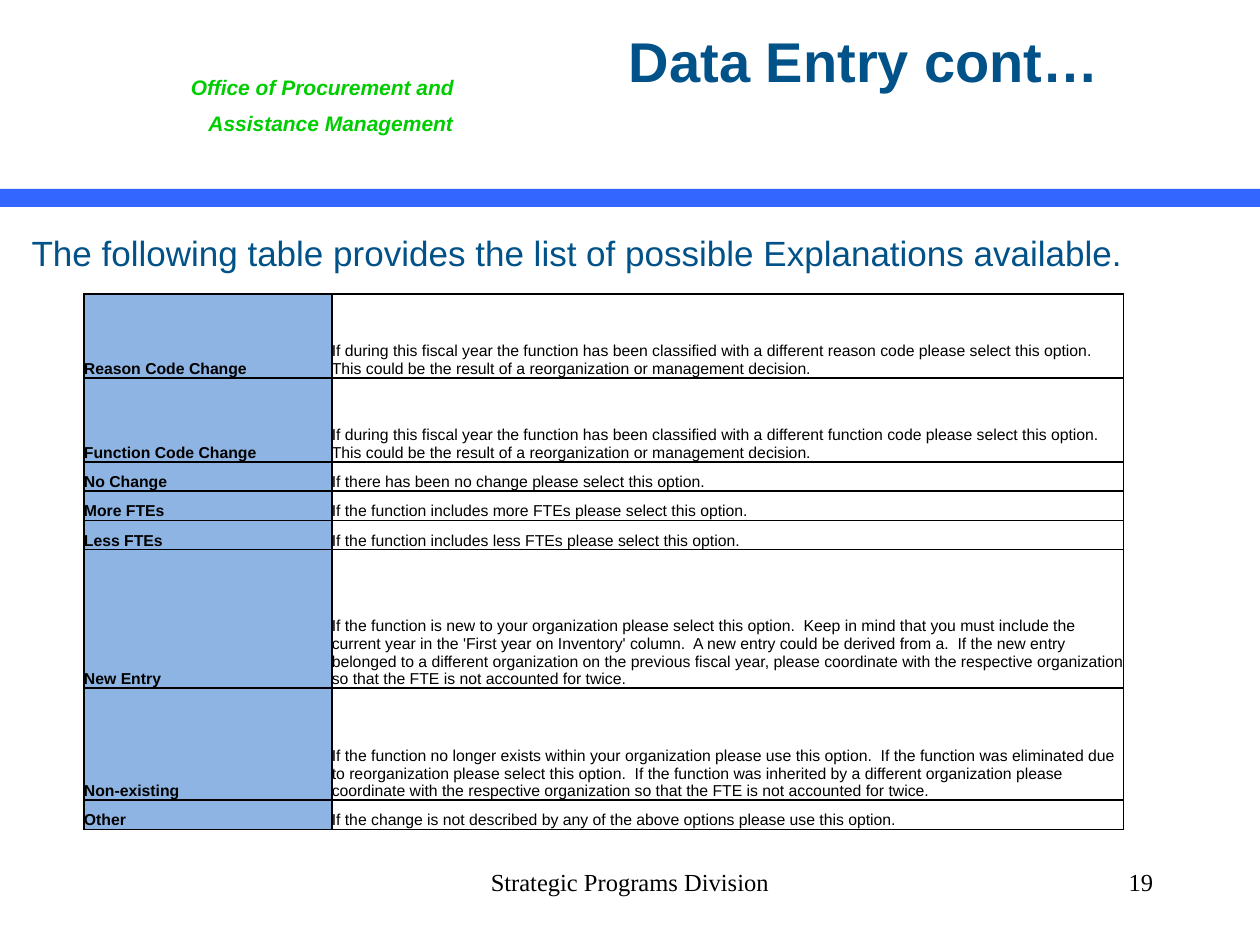
import pptx
import pptx.util
import pptx.dml.color
import pptx.enum.shapes
import pptx.enum.text
import pptx.oxml

COLS, ROWS = 120, 90
UNIT = pptx.util.Inches(10) / COLS
NS = "http://schemas.openxmlformats.org/drawingml/2006/main"
ALIGN = pptx.enum.text.PP_ALIGN
ANCHOR = pptx.enum.text.MSO_ANCHOR

TITLE = {"name": "Arial", "size": pptx.util.Pt(32), "bold": True}
BODY = {"name": "Arial", "size": pptx.util.Pt(20)}
OFFICE = {"name": "Arial", "size": pptx.util.Pt(12), "bold": True, "italic": True}
FOOTER = {"name": "Times New Roman", "size": pptx.util.Pt(14)}
LABEL = {"name": "Arial", "size": pptx.util.Pt(9), "bold": True}
DETAIL = {**LABEL, "bold": False}
NO_MARGINS = dict.fromkeys(
    ("margin_left", "margin_top", "margin_right", "margin_bottom"), 0)

EXPLANATIONS = [
    (8, "Reason Code Change",
     "If during this fiscal year the function has been classified with a different reason code "
     "please select this option.  This could be the result of a reorganization or management decision."),
    (8, "Function Code Change",
     "If during this fiscal year the function has been classified with a different function code "
     "please select this option.  This could be the result of a reorganization or management decision."),
    (2.78, "No Change", "If there has been no change please select this option."),
    (2.78, "More FTEs", "If the function includes more FTEs please select this option."),
    (2.78, "Less FTEs", "If the function includes less FTEs please select this option."),
    (13.2, "New Entry",
     "If the function is new to your organization please select this option.  Keep in mind that you "
     "must include the current year in the 'First year on Inventory' column.  A new entry could be "
     "derived from a.  If the new entry belonged to a different organization on the previous fiscal "
     "year, please coordinate with the respective organization so that the FTE is not accounted for twice."),
    (10.68, "Non-existing",
     "If the function no longer exists within your organization please use this option.  If the "
     "function was eliminated due to reorganization please select this option.  If the function was "
     "inherited by a different organization please coordinate with the respective organization so "
     "that the FTE is not accounted for twice."),
    (2.78, "Other",
     "If the change is not described by any of the above options please use this option."),
]


def grid(*values):
    return [round(v * UNIT) for v in values]


def rgb(value):
    return pptx.dml.color.RGBColor.from_string(value)


def assign(obj, values):
    for key, value in values.items():
        setattr(obj, key, value)


def write(p, text, fmt, color):
    r = p.add_run()
    r.text = text
    assign(r.font, fmt)
    r.font.color.rgb = rgb(color)


def add_text(s, box, lines, fmt, color, align=ALIGN.LEFT, margins=None):
    tf = s.shapes.add_textbox(*grid(*box)).text_frame
    tf.word_wrap = True
    assign(tf, margins or {})
    for i, text in enumerate(lines):
        p = tf.add_paragraph() if i else tf.paragraphs[0]
        p.alignment = align
        if i:
            p.space_before = pptx.util.Pt(6)
        write(p, text, fmt, color)
    return tf


def add_header(s, x, y, w, h):
    band = s.shapes.add_shape(
        pptx.enum.shapes.MSO_SHAPE.RECTANGLE, *grid(x, y + h - 1.7, w, 1.7))
    band.shadow.inherit = False
    band.fill.solid()
    band.fill.fore_color.rgb = rgb("3366FF")
    band.line.fill.background()
    tf = add_text(s, (x + 17, y + 6.5, 28.5, 6),
                  ["Office of Procurement and", "Assistance Management"], OFFICE, "00CD00")
    tf.paragraphs[1]._p.get_or_add_pPr().set("marL", str(pptx.util.Pt(10)))
    add_text(s, (x + 46.3, y + 2.5, 72, 14), ["Data Entry cont…"], TITLE, "005288",
             ALIGN.CENTER, NO_MARGINS)


def add_borders(cell):
    tcPr = cell._tc.get_or_add_tcPr()
    for i, side in enumerate(("lnL", "lnR", "lnT", "lnB")):
        tcPr.insert(i, pptx.oxml.parse_xml(
            f'<a:{side} xmlns:a="{NS}" w="12700"><a:solidFill>'
            f'<a:srgbClr val="000000"/></a:solidFill></a:{side}>'))


def add_explanations(s, x, y, w, h):
    table = s.shapes.add_table(len(EXPLANATIONS), 2, *grid(x, y, w, h)).table
    label_width = 23.6
    for column, width in zip(table.columns, grid(label_width, w - label_width)):
        column.width = width
    for i, (height, *texts) in enumerate(EXPLANATIONS):
        table.rows[i].height = grid(height)[0]
        for j, (text, fmt, fill) in enumerate(
                zip(texts, (LABEL, DETAIL), ("8DB4E3", "FFFFFF"))):
            cell = table.cell(i, j)
            assign(cell, {**NO_MARGINS, "vertical_anchor": ANCHOR.BOTTOM})
            cell.fill.solid()
            cell.fill.fore_color.rgb = rgb(fill)
            add_borders(cell)
            write(cell.text_frame.paragraphs[0], text, fmt, "000000")


def add_body(s, x, y, w, h):
    add_text(s, (x, y, w, h),
             ["The following table provides the list of possible Explanations available."],
             BODY, "005288", margins=NO_MARGINS)
    add_explanations(s, x + 5, y + 6, 99, 51)


def add_footer(s, x, y, w, h):
    add_text(s, (x + 41, y, 38, h), ["Strategic Programs Division"], FOOTER, "000000",
             ALIGN.CENTER)
    add_text(s, (x + w - 34, y, 25, h), ["19"], FOOTER, "000000", ALIGN.RIGHT)


def main():
    prs = pptx.Presentation()
    prs.slide_width, prs.slide_height = grid(COLS, ROWS)
    s = prs.slides.add_slide(prs.slide_layouts[6])
    add_header(s, 0, 0, COLS, 19.7)
    add_body(s, 3, 22, 112, 58)
    add_footer(s, 0, 82, COLS, 6)
    prs.save("out.pptx")


if __name__ == "__main__":
    main()
